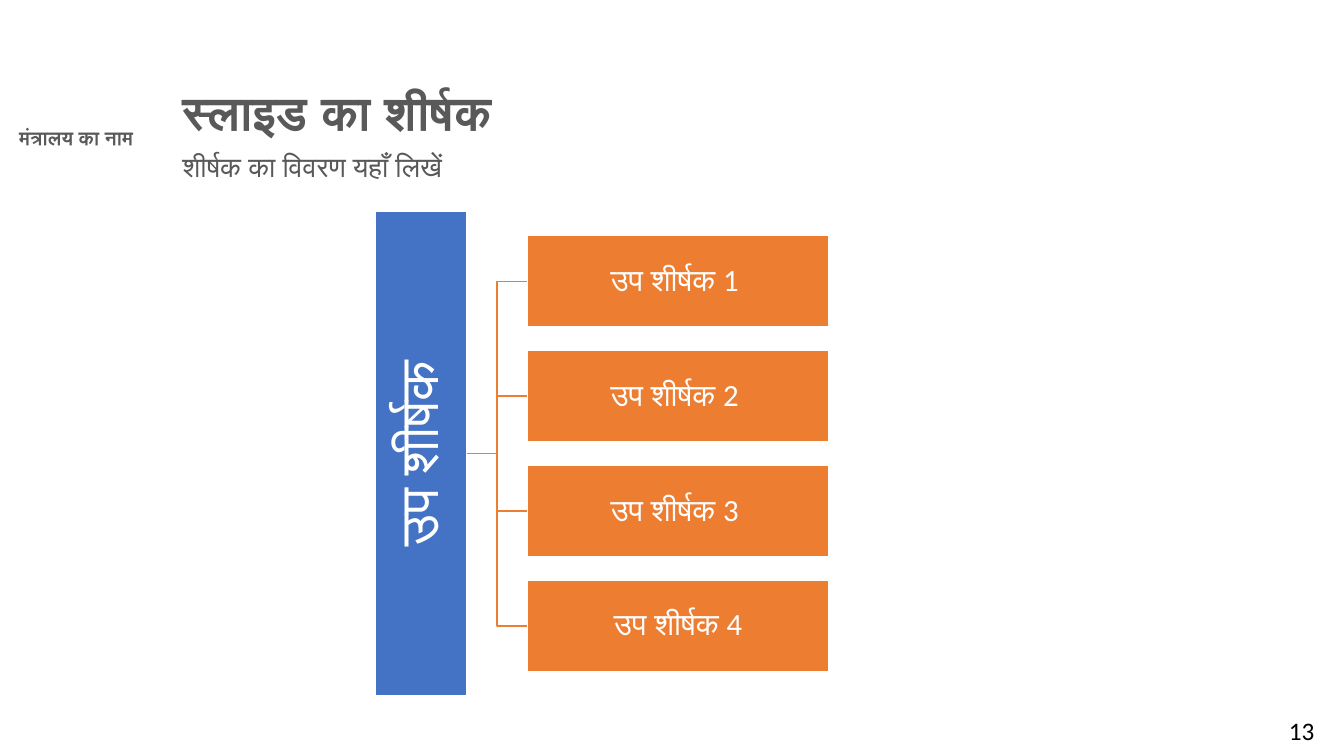
import pptx
import pptx.util
import pptx.dml.color
import pptx.enum.shapes
import pptx.enum.text

Inches = pptx.util.Inches
Pt = pptx.util.Pt
ALIGN = pptx.enum.text.PP_ALIGN
COLORS = {"grey": "595959", "blue": "4472C4", "orange": "ED7D31",
          "white": "FFFFFF", "black": "000000"}


def rgb(name):
    return pptx.dml.color.RGBColor.from_string(COLORS[name])


def write(sp, text, size, color, font="Calibri", bold=False,
          align=ALIGN.LEFT, spacing=0.9):
    """Put one styled run in the first paragraph of a shape."""
    tf = sp.text_frame
    tf.word_wrap = True
    p = tf.paragraphs[0]
    p.alignment = align
    p.line_spacing = spacing
    r = p.add_run()
    r.text = text
    r.font.name = font
    r.font.size = Pt(size)
    r.font.bold = bold
    r.font.color.rgb = rgb(color)


def add_text(s, box, text, size, color, **style):
    sp = s.shapes.add_textbox(*(Inches(v) for v in box))
    write(sp, text, size, color, **style)


def add_bar(s, box, text, size, fill, inset, rotation=0):
    """Add a filled rectangle with a white border and centred label."""
    sp = s.shapes.add_shape(pptx.enum.shapes.MSO_SHAPE.RECTANGLE,
                            *(Inches(v) for v in box))
    sp.shadow.inherit = False
    sp.rotation = rotation
    sp.fill.solid()
    sp.fill.fore_color.rgb = rgb(fill)
    sp.line.color.rgb = rgb("white")
    sp.line.width = Pt(1)
    tf = sp.text_frame
    tf.margin_left = tf.margin_right = Inches(inset)
    tf.margin_top = tf.margin_bottom = Inches(inset)
    tf.vertical_anchor = pptx.enum.text.MSO_ANCHOR.MIDDLE
    write(sp, text, size, "white", align=ALIGN.CENTER)


def add_elbow(s, x1, y1, x2, y2):
    mid = (x1 + x2) / 2
    points = [(Inches(x), Inches(y))
              for x, y in ((x1, y1), (mid, y1), (mid, y2), (x2, y2))]
    builder = s.shapes.build_freeform(*points[0])
    builder.add_line_segments(points[1:], close=False)
    sp = builder.convert_to_shape()
    sp.shadow.inherit = False
    sp.fill.background()
    sp.line.color.rgb = rgb("orange")
    sp.line.width = Pt(1)


def add_heading(s, left, top, width):
    add_text(s, (left, top, width, 0.55), "स्लाइड का शीर्षक", 34, "grey", bold=True)
    add_text(s, (left, top + 0.63, width, 0.63), "शीर्षक का विवरण यहाँ लिखें", 20, "grey")


def add_hierarchy(s, left, top, width, height, root, branches):
    """Draw an upright root bar joined to a centred column of branches."""
    bar, gap, pitch = 0.91, 0.6, 1.14
    middle = top + height / 2
    branch_left = left + bar + gap
    branch_width = width - bar - gap
    centres = [middle + (i - (len(branches) - 1) / 2) * pitch
               for i in range(len(branches))]
    for y in reversed(centres):
        add_elbow(s, left + bar, middle, branch_left, y)
    root_box = (left + (bar - height) / 2, middle - bar / 2, height, bar)
    add_bar(s, root_box, root, 39, "blue", 0.03, rotation=270)
    for y, label in zip(centres, branches):
        add_bar(s, (branch_left, y - bar / 2, branch_width, bar),
                label, 22, "orange", 0.02)


def main():
    prs = pptx.Presentation()
    prs.slide_width, prs.slide_height = Inches(13.33), Inches(7.5)
    s = prs.slides.add_slide(prs.slide_layouts[6])
    add_text(s, (-0.11, 1.23, 1.73, 0.35), "मंत्रालय का नाम", 14, "grey",
             font="Arial", bold=True, align=ALIGN.CENTER)
    add_heading(s, 1.71, 0.84, 9.61)
    add_hierarchy(s, 3.72, 2.1, 4.5, 4.8, "उप शीर्षक",
                  ["उप शीर्षक 1 ", "उप शीर्षक 2 ", "उप शीर्षक 3 ", "उप शीर्षक 4"])
    add_text(s, (12.49, 7.05, 0.84, 0.45), "13", 18, "black",
             align=ALIGN.CENTER, spacing=1.0)
    prs.save("out.pptx")


if __name__ == "__main__":
    main()
